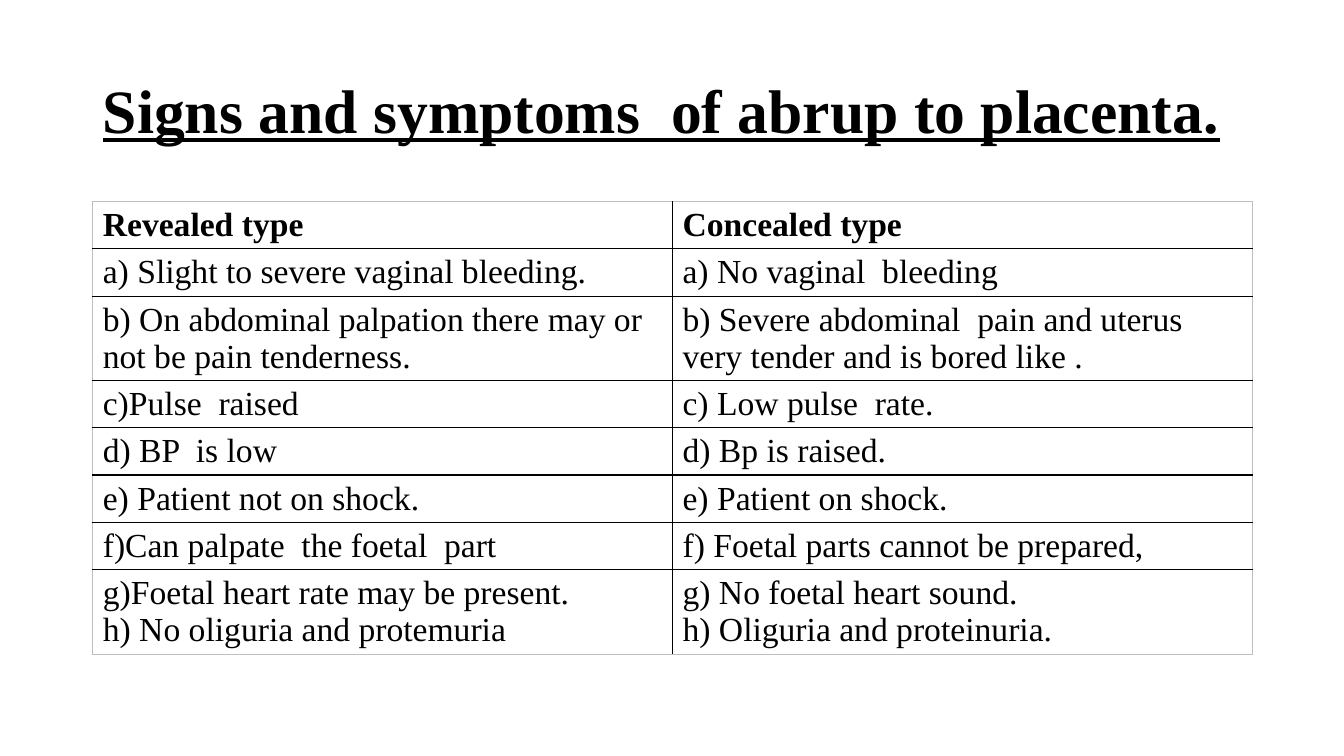
from lxml.etree import SubElement
from pptx import Presentation
from pptx.dml.color import RGBColor
from pptx.enum.text import MSO_ANCHOR, PP_ALIGN
from pptx.oxml.ns import qn
from pptx.util import Inches, Pt

THEME = {
    "font": "Times New Roman",
    "ink": "000000",
    "edge": "BFBFBF",
    "title": 44,
    "body": 24,
    "inner": 1,
    "outer": 0.5,
}

ROWS = [
    ("Revealed type", "Concealed type"),
    ("a) Slight to severe vaginal bleeding.", "a) No vaginal  bleeding"),
    ("b) On abdominal palpation there may or not be pain tenderness.",
     "b) Severe abdominal  pain and uterus very tender and is bored like ."),
    ("c)Pulse  raised", "c) Low pulse  rate."),
    ("d) BP  is low", "d) Bp is raised."),
    ("e) Patient not on shock.", "e) Patient on shock."),
    ("f)Can palpate  the foetal  part", "f) Foetal parts cannot be prepared,"),
    ("g)Foetal heart rate may be present.\nh) No oliguria and protemuria",
     "g) No foetal heart sound.\nh) Oliguria and proteinuria."),
]


def style(para, size, **extra):
    """Apply the theme font to every run of a paragraph."""
    looks = {"name": THEME["font"], "size": Pt(THEME[size]), **extra}
    for run in para.runs:
        for key, value in looks.items():
            setattr(run.font, key, value)
        run.font.color.rgb = RGBColor.from_string(THEME["ink"])


def border(cell, side, outer):
    """Draw one side of a cell, lighter on the rim of the table."""
    width = Pt(THEME["outer" if outer else "inner"])
    props = cell._tc.get_or_add_tcPr()
    line = SubElement(props, qn(f"a:ln{side}"), w=str(width))
    fill = SubElement(line, qn("a:solidFill"))
    SubElement(fill, qn("a:srgbClr"), val=THEME["edge" if outer else "ink"])


deck = Presentation()
deck.slide_width, deck.slide_height = Inches(13.33), Inches(7.5)
slide = deck.slides.add_slide(deck.slide_layouts[5])

title = slide.shapes.title
place = {"left": 0.92, "top": 0.4, "width": 11.5, "height": 1.45}
for key, value in place.items():
    setattr(title, key, Inches(value))
title.text = "Signs and symptoms  of abrup to placenta."
title.text_frame.word_wrap = True
title.text_frame.vertical_anchor = MSO_ANCHOR.MIDDLE
head = title.text_frame.paragraphs[0]
head.alignment = PP_ALIGN.LEFT
head.line_spacing = 0.9
style(head, "title", bold=True, underline=True)

last = len(ROWS) - 1
table = slide.shapes.add_table(
    len(ROWS), 2, Inches(0.92), Inches(2), Inches(11.5), Inches(0.41 * len(ROWS))
).table
table.first_row = table.horz_banding = False

for r, texts in enumerate(ROWS):
    for c, text in enumerate(texts):
        cell = table.cell(r, c)
        cell.text = text
        for para in cell.text_frame.paragraphs:
            style(para, "body", bold=r == 0)
        rims = {"L": c == 0, "R": c == 1, "T": r == 0, "B": r == last}
        for side, outer in rims.items():
            border(cell, side, outer)
        cell.fill.background()

deck.save("out.pptx")
